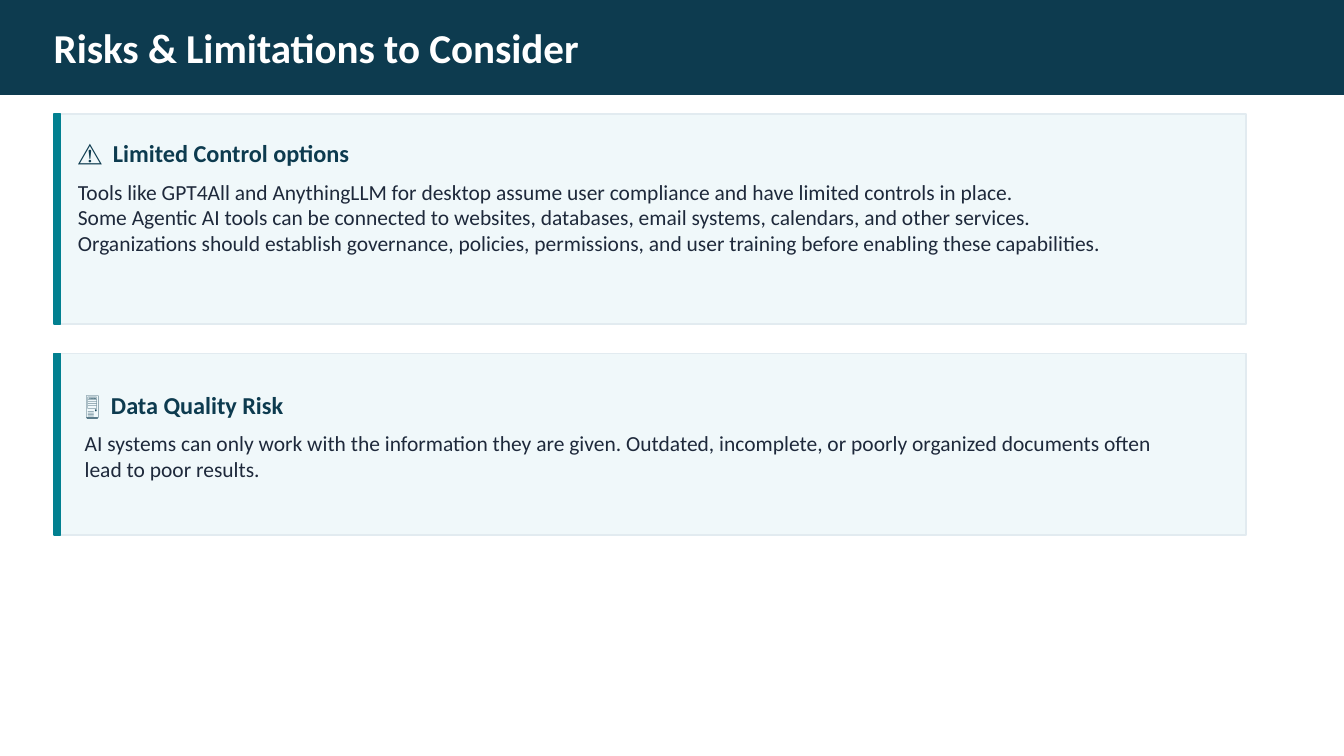
import pptx
import pptx.dml.color
import pptx.enum.shapes
import pptx.enum.text
import pptx.util

Inches = pptx.util.Inches
ANCHOR = pptx.enum.text.MSO_ANCHOR

COLORS = {
    "navy": "0D3B4F",
    "teal": "028090",
    "mist": "F0F8FA",
    "edge": "E2EBF0",
    "ink": "1E293B",
    "white": "FFFFFF",
}
FORMATS = {
    "title": {"size": pptx.util.Pt(22), "bold": True, "name": "Calibri"},
    "heading": {"size": pptx.util.Pt(13), "bold": True, "name": "Calibri"},
    "body": {"size": pptx.util.Pt(11.5), "bold": False, "name": "Calibri"},
}
BAR_WIDTH = 0.05
TEXT_INDENT = 0.18
HEADING_HEIGHT = 0.38
BODY_HEIGHT = 0.82

RISKS = [
    {
        "box": (0.4, 0.85, 8.87, 1.56),
        "panel_offset": 0,
        "text_offset": 0.1,
        "heading_width": 4.2,
        "body_width": 8.43,
        "heading": "⚠️  Limited Control options",
        "body": [
            "Tools like GPT4All and AnythingLLM for desktop assume user compliance and have limited controls in place.",
            "Some Agentic AI tools can be connected to websites, databases, email systems, calendars, and other services.",
            "Organizations should establish governance, policies, permissions, and user training before enabling these capabilities.",
        ],
    },
    {
        "box": (0.4, 2.63, 8.87, 1.35),
        "panel_offset": BAR_WIDTH,
        "text_offset": 0.19,
        "heading_width": 8.23,
        "body_width": 8.23,
        "heading": "🖥️  Data Quality Risk",
        "body": [
            "AI systems can only work with the information they are given. Outdated, incomplete, or poorly organized documents often lead to poor results.",
        ],
    },
]


def rgb(color):
    return pptx.dml.color.RGBColor.from_string(COLORS[color])


def add_block(slide, box, fill, line):
    block = slide.shapes.add_shape(
        pptx.enum.shapes.MSO_SHAPE.RECTANGLE, *map(Inches, box)
    )
    block.shadow.inherit = False
    block.fill.solid()
    block.fill.fore_color.rgb = rgb(fill)
    block.line.color.rgb = rgb(line)
    block.line.width = pptx.util.Pt(1)


def add_text(slide, box, lines, style, color, anchor):
    frame = slide.shapes.add_textbox(*map(Inches, box)).text_frame
    settings = {"word_wrap": True, "vertical_anchor": anchor}
    settings |= {f"margin_{side}": 0 for side in ("left", "top", "right", "bottom")}
    for key, value in settings.items():
        setattr(frame, key, value)
    for index, line in enumerate(lines):
        paragraph = frame.add_paragraph() if index else frame.paragraphs[0]
        run = paragraph.add_run()
        run.text = line
        for key, value in FORMATS[style].items():
            setattr(run.font, key, value)
        run.font.color.rgb = rgb(color)


def add_header(slide, box, title):
    left, top, width, height = box
    margin = 0.4
    add_block(slide, box, "navy", "navy")
    title_box = (left + margin, top, width - 2 * margin, height)
    add_text(slide, title_box, [title], "title", "white", ANCHOR.MIDDLE)


def add_risk_card(slide, risk):
    left, top, width, height = risk["box"]
    offset = risk["panel_offset"]
    panel_left = left + offset
    text_left = panel_left + TEXT_INDENT
    heading_top = top + risk["text_offset"]
    heading_box = (text_left, heading_top, risk["heading_width"], HEADING_HEIGHT)
    body_box = (text_left, heading_top + HEADING_HEIGHT, risk["body_width"], BODY_HEIGHT)

    add_block(slide, (panel_left, top, width - offset, height), "mist", "edge")
    add_block(slide, (left, top, BAR_WIDTH, height), "teal", "teal")
    add_text(slide, heading_box, [risk["heading"]], "heading", "navy", ANCHOR.MIDDLE)
    add_text(slide, body_box, risk["body"], "body", "ink", ANCHOR.TOP)


def main():
    deck = pptx.Presentation()
    deck.slide_width = Inches(10)
    deck.slide_height = deck.slide_width * 9 // 16
    slide = deck.slides.add_slide(deck.slide_layouts[6])
    add_header(slide, (0, 0, 10, 0.7), "Risks & Limitations to Consider")
    for risk in RISKS:
        add_risk_card(slide, risk)
    deck.save("out.pptx")


if __name__ == "__main__":
    main()
